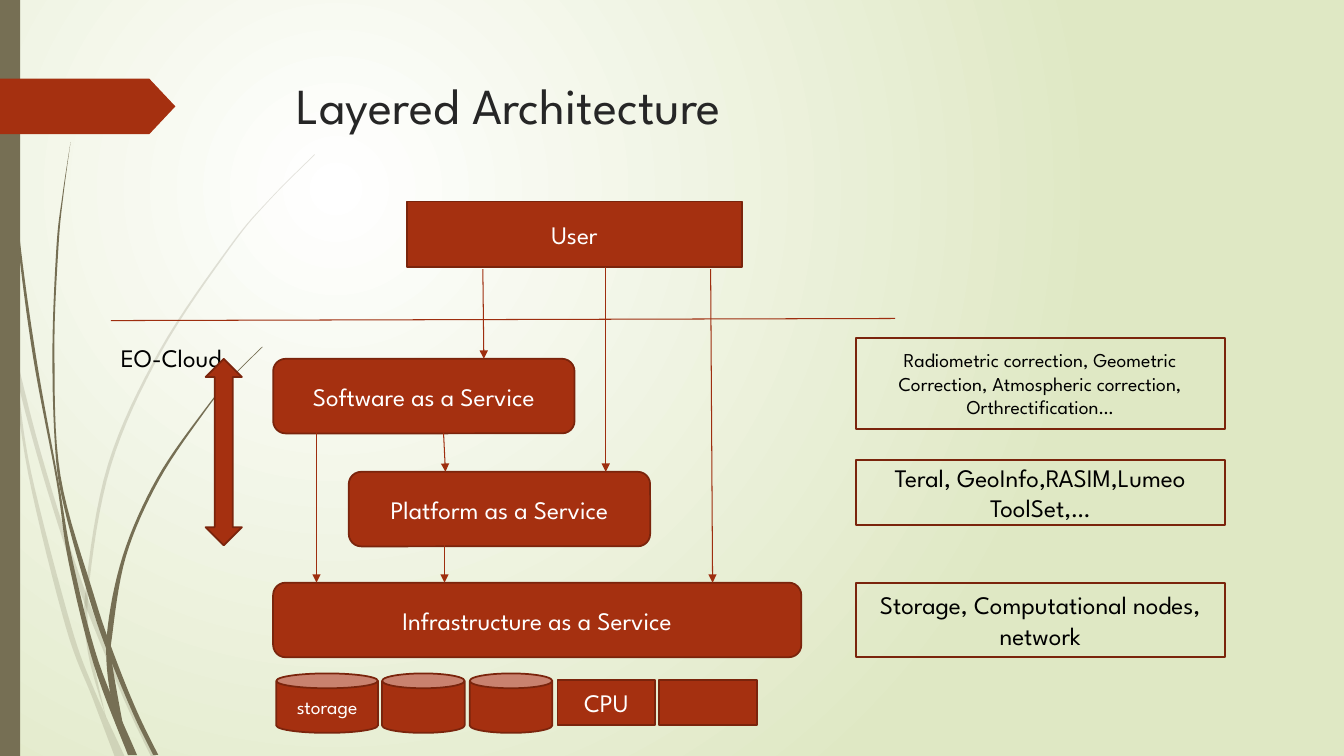
from lxml import etree
from pptx import Presentation
from pptx.dml.color import RGBColor
from pptx.enum.shapes import MSO_CONNECTOR, MSO_SHAPE
from pptx.enum.text import MSO_ANCHOR, MSO_AUTO_SIZE, PP_ALIGN
from pptx.oxml.ns import qn
from pptx.util import Pt

RECTANGLE = MSO_SHAPE.RECTANGLE
ROUNDED = MSO_SHAPE.ROUNDED_RECTANGLE
CAN = MSO_SHAPE.CAN
RIBBON = MSO_SHAPE.PENTAGON
DOUBLE_ARROW = MSO_SHAPE.UP_DOWN_ARROW
STRAIGHT = MSO_CONNECTOR.STRAIGHT
TOP, MIDDLE = MSO_ANCHOR.TOP, MSO_ANCHOR.MIDDLE
LEFT, CENTER = PP_ALIGN.LEFT, PP_ALIGN.CENTER
NO_AUTOFIT = MSO_AUTO_SIZE.NONE

WHITE = RGBColor(0xFF, 0xFF, 0xFF)
BLACK = RGBColor(0x00, 0x00, 0x00)
CHARCOAL = RGBColor(0x26, 0x26, 0x26)
PALE_GREEN = RGBColor(0xDF, 0xE8, 0xC4)
OLIVE = RGBColor(0x76, 0x6F, 0x54)
RUST = RGBColor(0xA5, 0x30, 0x10)
DARK_RUST = RGBColor(0x7A, 0x24, 0x0C)
ARROW_RUST = RGBColor(0x9E, 0x2E, 0x0F)

WISP_UNIT = Pt(0.72)
FAINT_WISPS = [
    ([(0, 299), (10, 344), (28, 470), (65, 621), (92, 693), (114, 751)],
     [(0, 282), (9, 322), (17, 376), (31, 469), (70, 619), (93, 683), (124, 751)]),
    ([(14, 345), (17, 376), (36, 449), (58, 522), (84, 599), (123, 694), (150, 751)],
     [(14, 345), (36, 433), (62, 520), (92, 607), (127, 692), (155, 751)]),
    ([(312, 153), (268, 197), (228, 244), (158, 348), (107, 461), (85, 584), (87, 646), (105, 711)],
     [(312, 154), (268, 198), (229, 245), (160, 349), (110, 462), (88, 584), (91, 646), (105, 711)]),
]
SOLID_WISPS = [
    ([(3, 0), (7, 110), (17, 233), (33, 355), (56, 477), (68, 557), (93, 659), (127, 749)],
     [(4, 0), (8, 109), (19, 232), (36, 355), (58, 477), (72, 556), (98, 657), (136, 749)]),
    ([(70, 141), (62, 193), (56, 245), (52, 349), (55, 449), (64, 505), (88, 592), (106, 645),
      (132, 708), (152, 749)],
     [(70, 141), (63, 193), (58, 245), (54, 349), (60, 472), (93, 590), (113, 649), (136, 706),
      (157, 749)]),
    ([(260, 344), (231, 373), (204, 405), (156, 474), (122, 551), (106, 631), (110, 691), (122, 719)],
     [(261, 344), (231, 374), (205, 406), (158, 476), (125, 552), (111, 633), (111, 656), (122, 719)]),
]

BOXES = [
    (ROUNDED, 195.1, 416.2, 377.3, 53.3, "Infrastructure as a Service", 18),
    (ROUNDED, 249.1, 337, 215.3, 53.3, "Platform as a Service", 18),
    (ROUNDED, 195.1, 256.3, 215.3, 53.3, "Software as a Service", 18),
    (RECTANGLE, 290.9, 144, 239, 46.8, "User", 18),
    (CAN, 197.3, 481, 72.7, 42.5, "storage", 14),
    (CAN, 272.9, 481, 59, 42.5, "", 18),
    (CAN, 335.5, 481, 59, 42.5, "", 18),
    (RECTANGLE, 398.2, 486, 69.8, 31.7, "CPU", 18),
    (RECTANGLE, 470.9, 486, 69.8, 31.7, "", 18),
]
ARROWS = [
    (226.1, 308.9, 226.1, 416.2),
    (316.8, 308.9, 318.2, 337),
    (317.5, 389.5, 317.5, 416.2),
    (344.9, 192.2, 345.6, 256.3),
    (432.7, 190.8, 432.7, 337),
    (507.6, 192.2, 509, 416.2),
]
NOTES = [
    (416.2, 53.3, "Storage, Computational nodes, network", 18),
    (328.3, 46.8, "Teral, GeoInfo,RASIM,Lumeo ToolSet,…", 18),
    (241.2, 65.5, "Radiometric correction, Geometric Correction, "
                  "Atmospheric correction, Orthrectification…", 14),
]


def write_text(box, text, size=18, color=WHITE, align=CENTER, anchor=MIDDLE):
    frame = box.text_frame
    frame.word_wrap = True
    frame.auto_size = NO_AUTOFIT
    frame.vertical_anchor = anchor
    para = frame.paragraphs[0]
    para.alignment = align
    span = para.add_run()
    span.text = text
    span.font.name = SlideBuilder.font
    span.font.size = Pt(size)
    span.font.color.rgb = color


def smooth(points, steps=8):
    padded = [points[0], *points, points[-1]]
    curve = [points[0]]
    for before, start, end, after in zip(padded, padded[1:], padded[2:], padded[3:]):
        for step in range(1, steps + 1):
            t = step / steps
            curve.append(tuple(
                b + t * (c - a) / 2 + t**2 * (2 * a - 5 * b + 4 * c - d) / 2
                + t**3 * (3 * b - a - 3 * c + d) / 2
                for a, b, c, d in zip(before, start, end, after)))
    return curve


class SlideBuilder:
    font = "League Spartan"
    border = 1.25
    arrow_width = 0.75

    def __init__(self, page):
        self.page = page

    def background(self, inner, outer):
        fill = self.page.background.fill
        fill.gradient()
        for stop, color in zip(fill.gradient_stops, (inner, outer)):
            stop.color.rgb = color
        gradient = self.page.element.find(".//" + qn("a:gradFill"))
        for linear in gradient.findall(qn("a:lin")):
            gradient.remove(linear)
        circle = etree.SubElement(gradient, qn("a:path"), {"path": "circle"})
        etree.SubElement(circle, qn("a:fillToRect"),
                         {"l": "50000", "t": "50000", "r": "100000", "b": "100000"})

    def title(self, text, left, top, width, height):
        box = self.page.shapes.title
        box.left, box.top, box.width, box.height = map(Pt, (left, top, width, height))
        write_text(box, text, size=36, color=CHARCOAL, align=LEFT, anchor=TOP)

    def shape(self, kind, left, top, width, height, fill=RUST, line=DARK_RUST):
        box = self.page.shapes.add_shape(kind, *map(Pt, (left, top, width, height)))
        self.paint(box, fill, line)
        return box

    def paint(self, box, fill, line):
        box.shadow.inherit = False
        if fill is None:
            box.fill.background()
        else:
            box.fill.solid()
            box.fill.fore_color.rgb = fill
        if line is None:
            box.line.fill.background()
        else:
            box.line.color.rgb = line
            box.line.width = Pt(self.border)

    def wisp(self, near_edge, far_edge, opacity):
        outline = smooth(near_edge) + smooth(far_edge)[::-1]
        points = [(x * WISP_UNIT, y * WISP_UNIT) for x, y in outline]
        builder = self.page.shapes.build_freeform(*points[0])
        builder.add_line_segments(points[1:], close=True)
        blade = builder.convert_to_shape()
        self.paint(blade, OLIVE, None)
        color = blade.element.spPr.find(".//" + qn("a:srgbClr"))
        etree.SubElement(color, qn("a:alpha"), {"val": str(opacity * 1000)})

    def label(self, text, left, top, width, height):
        box = self.page.shapes.add_textbox(*map(Pt, (left, top, width, height)))
        write_text(box, text, color=BLACK, align=LEFT, anchor=TOP)

    def line(self, start_x, start_y, end_x, end_y, arrow=False):
        link = self.page.shapes.add_connector(
            STRAIGHT, *map(Pt, (start_x, start_y, end_x, end_y)))
        link.line.color.rgb = ARROW_RUST
        link.line.width = Pt(self.arrow_width)
        properties = link.element.spPr
        if arrow:
            etree.SubElement(properties.find(qn("a:ln")), qn("a:tailEnd"), {"type": "triangle"})
        etree.SubElement(properties, qn("a:effectLst"))


def main():
    deck = Presentation()
    deck.slide_width, deck.slide_height = Pt(960), Pt(540)
    page = deck.slides.add_slide(deck.slide_layouts[5])
    builder = SlideBuilder(page)

    builder.background(WHITE, PALE_GREEN)
    for wisps, opacity in ((FAINT_WISPS, 20), (SOLID_WISPS, 100)):
        for near_edge, far_edge in wisps:
            builder.wisp(near_edge, far_edge, opacity)
    builder.shape(RECTANGLE, 0, 0, 14.4, 540, fill=OLIVE, line=None)
    ribbon = builder.shape(RIBBON, 0, 56.2, 125.3, 39.6, line=None)
    ribbon.adjustments[0] = 0.47

    builder.title("Layered Architecture", 204.5, 49, 702, 100.8)
    builder.label("EO-Cloud", 79.2, 241.2, 94.3, 28.8)
    for kind, left, top, width, height, text, size in BOXES:
        box = builder.shape(kind, left, top, width, height)
        if text:
            write_text(box, text, size=size)
    builder.line(79.2, 229, 639.4, 227.5)
    for ends in ARROWS:
        builder.line(*ends, arrow=True)
    for top, height, text, size in NOTES:
        note = builder.shape(RECTANGLE, 611.3, top, 263.5, height, fill=None)
        write_text(note, text, size=size, color=BLACK)
    builder.shape(DOUBLE_ARROW, 146.9, 256.3, 25.9, 133.2)

    deck.save("out.pptx")


if __name__ == "__main__":
    main()
